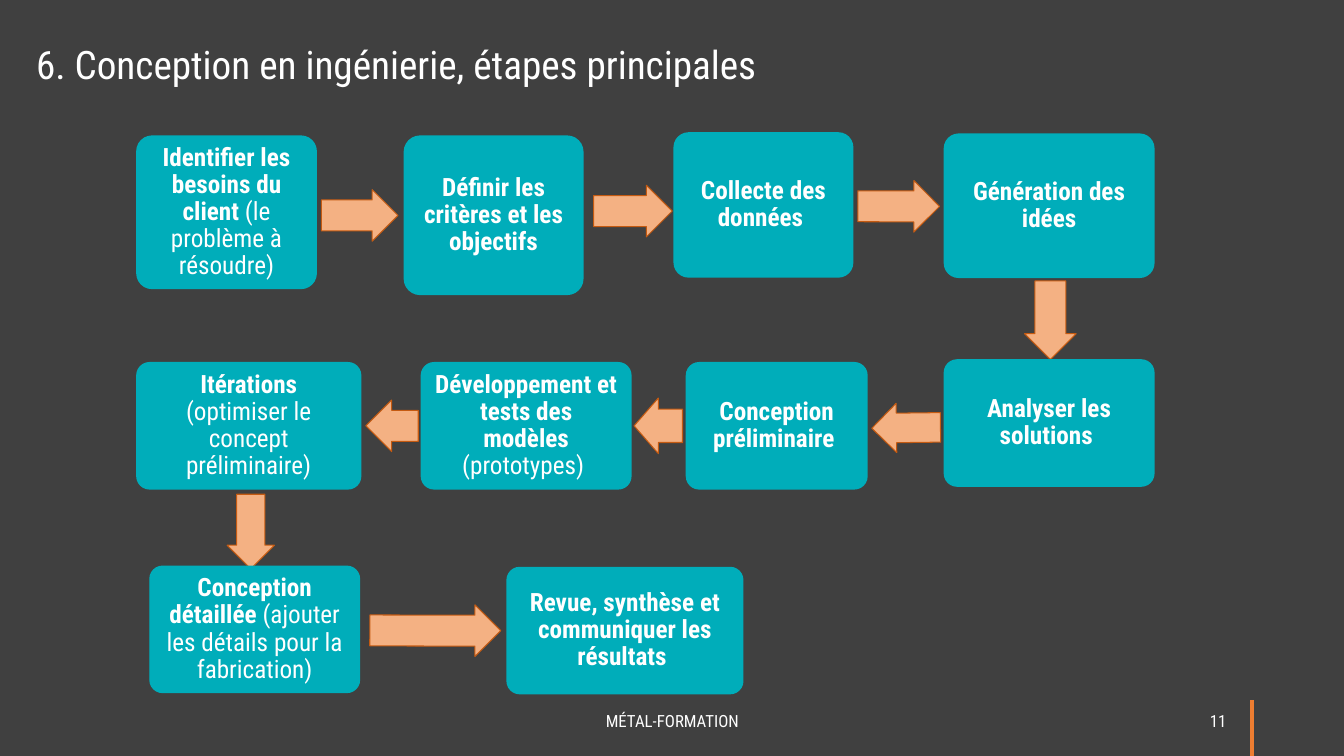
from pptx import Presentation
from pptx.dml.color import RGBColor
from pptx.enum.shapes import MSO_CONNECTOR, MSO_SHAPE
from pptx.enum.text import MSO_ANCHOR, PP_ALIGN
from pptx.oxml.ns import qn
from pptx.util import Cm, Pt
from lxml.etree import SubElement

DARK = RGBColor(0x40, 0x40, 0x40)
WHITE = RGBColor(0xFF, 0xFF, 0xFF)
TEAL = RGBColor(0x00, 0xAD, 0xBA)
PEACH = RGBColor(0xF4, 0xB1, 0x83)
RUST = RGBColor(0xC5, 0x5A, 0x11)
ORANGE = RGBColor(0xED, 0x7D, 0x31)
FONT = "Roboto Condensed"

# Each step: box, bold text, plain text, arrow to the next step, its rotation (cm, degrees)
STEPS = [
    ((3.45, 3.43, 4.52, 3.84), "Identifier les besoins du client ", "(le problème à résoudre)",
     (8.1, 4.78, 1.93, 1.3), 0),
    ((10.19, 3.43, 4.5, 3.99), "Définir les critères et les objectifs", "",
     (14.96, 4.67, 1.98, 1.3), 0),
    ((16.99, 3.35, 4.5, 3.63), "Collecte des données ", "",
     (21.62, 4.55, 2.06, 1.3), 0.1),
    ((23.8, 3.38, 5.28, 3.61), "Génération des idées", "",
     (25.48, 7.42, 1.98, 1.3), 90),
    ((23.8, 9.07, 5.28, 3.18), "Analyser les solutions ", "",
     (21.97, 10.16, 1.73, 1.24), 179.3),
    ((17.3, 9.14, 4.55, 3.18), "Conception préliminaire ", "",
     (15.98, 10.03, 1.22, 1.4), 180),
    ((10.62, 9.14, 5.28, 3.18), "Développement et tests des modèles ", "(prototypes) ",
     (9.22, 10.08, 1.32, 1.3), 180),
    ((3.45, 9.14, 5.64, 3.18), "Itérations", " (optimiser le concept préliminaire)",
     (5.38, 12.8, 1.88, 1.19), 90),
    ((3.78, 14.27, 5.28, 3.18), "Conception détaillée ",
     "(ajouter les détails pour la fabrication)", (9.32, 15.24, 3.3, 1.3), 0.1),
    ((12.78, 14.3, 5.94, 3.18), "Revue, synthèse et communiquer les résultats ", "", None, 0),
]


def write(frame, text, plain="", size=18, bold=False, align=PP_ALIGN.CENTER,
          anchor=MSO_ANCHOR.MIDDLE, side=0.25, edge=0.18, spacing=0.9, after=0):
    """Fill a text frame with text, followed by an optional plain part."""
    frame.word_wrap = True
    frame.vertical_anchor = anchor
    frame.margin_left = frame.margin_right = Cm(side)
    frame.margin_top = frame.margin_bottom = Cm(edge)
    paragraph = frame.paragraphs[0]
    paragraph.alignment = align
    paragraph.line_spacing = spacing
    paragraph.space_after = Pt(after)
    for words, weight in ((text, bold), (plain, False)):
        if words:
            run = paragraph.add_run()
            run.text = words
            run.font.name = FONT
            run.font.size = Pt(size)
            run.font.bold = weight
            run.font.color.rgb = WHITE


class ProcessSlide:
    def __init__(self, deck):
        self.slide = deck.slides.add_slide(deck.slide_layouts[6])
        self.shapes = self.slide.shapes
        background = self.slide.background.fill
        background.solid()
        background.fore_color.rgb = DARK

    def label(self, area, text, **style):
        box = self.shapes.add_textbox(*map(Cm, area))
        write(box.text_frame, text, **style)

    def block(self, kind, area, fill, line, width, adjustments):
        block = self.shapes.add_shape(kind, *map(Cm, area))
        block.shadow.inherit = False
        block.fill.solid()
        block.fill.fore_color.rgb = fill
        block.line.color.rgb = line
        block.line.width = Pt(width)
        for index, value in enumerate(adjustments):
            block.adjustments[index] = value
        return block

    def step(self, area, bold_text, plain_text):
        box = self.block(MSO_SHAPE.ROUNDED_RECTANGLE, area, TEAL, TEAL, 1, [0.1])
        write(box.text_frame, bold_text, plain_text, bold=True, after=6.3)

    def arrow(self, area, rotation):
        arrow = self.block(MSO_SHAPE.RIGHT_ARROW, area, PEACH, RUST, 0.75, [0.6, 0.5])
        arrow.rotation = rotation

    def rule(self, x, top, bottom):
        rule = self.shapes.add_connector(MSO_CONNECTOR.STRAIGHT, Cm(x), Cm(top), Cm(x), Cm(bottom))
        rule.line.color.rgb = ORANGE
        rule.line.width = Pt(2.25)
        SubElement(rule._element.spPr, qn("a:effectLst"))


def main():
    deck = Presentation()
    deck.slide_width, deck.slide_height = Cm(33.87), Cm(19.05)
    page = ProcessSlide(deck)

    # Footer
    page.rule(31.55, 17.65, 19.05)
    page.label((11.23, 17.65, 11.43, 1.02), "MÉTAL-FORMATION", size=12, spacing=1)
    page.label((27.81, 17.65, 3.35, 1.02), "11", size=12, spacing=1, align=PP_ALIGN.RIGHT)

    # Design steps and the arrows between them
    for area, bold_text, plain_text, arrow_area, rotation in STEPS:
        page.step(area, bold_text, plain_text)
        if arrow_area:
            page.arrow(arrow_area, rotation)

    # Title
    page.label((0.91, 1.14, 21.26, 2.11), "6. Conception en ingénierie, étapes principales",
               size=28, align=PP_ALIGN.LEFT, anchor=MSO_ANCHOR.TOP, side=0, edge=0)

    deck.save("out.pptx")


if __name__ == "__main__":
    main()
